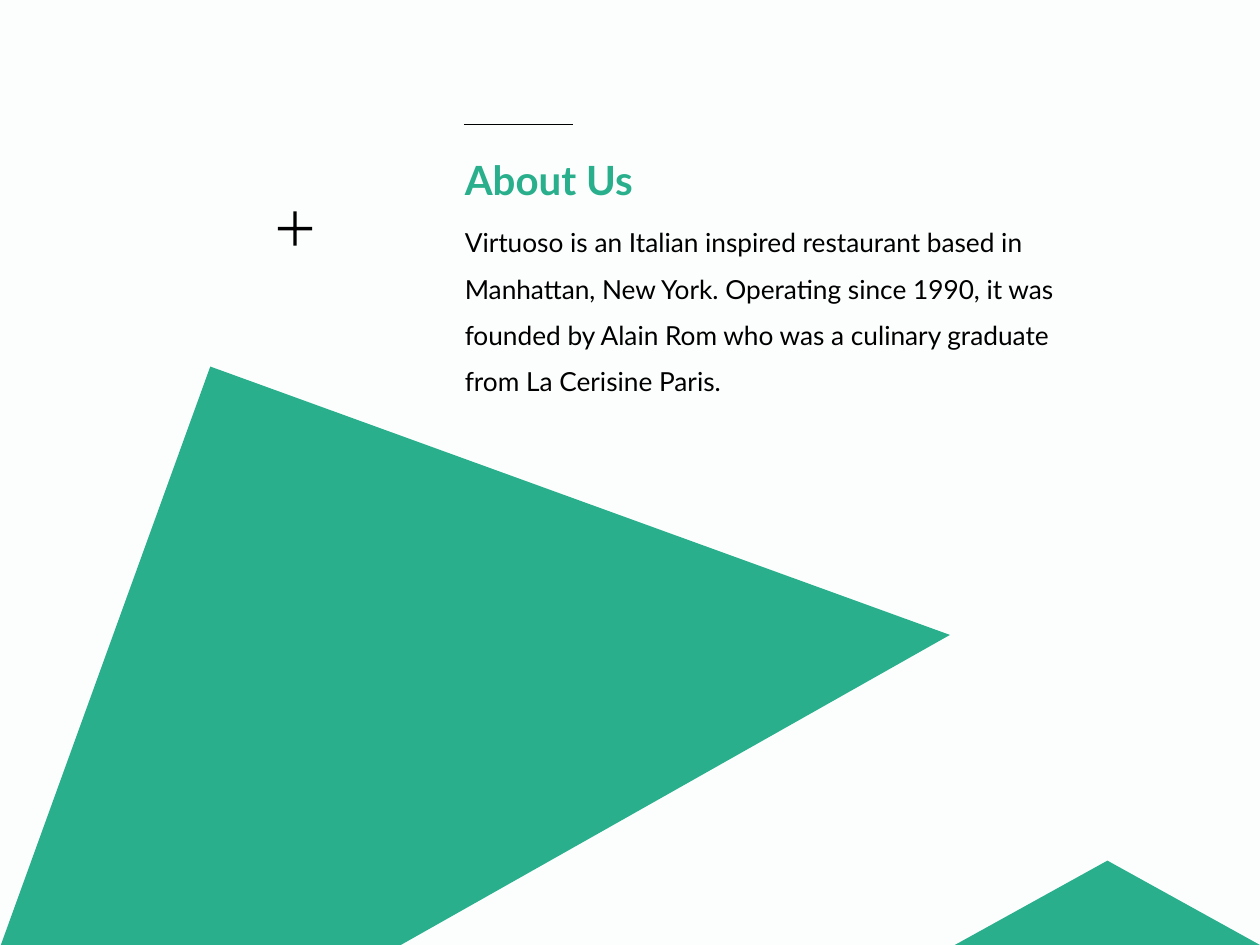
from dataclasses import dataclass

from lxml import etree
from pptx import Presentation
from pptx.dml.color import RGBColor
from pptx.enum.shapes import MSO_CONNECTOR, MSO_SHAPE
from pptx.enum.text import MSO_ANCHOR, MSO_AUTO_SIZE, PP_ALIGN
from pptx.oxml.ns import qn
from pptx.util import Cm, Pt


@dataclass(frozen=True)
class Theme:
    paper: RGBColor = RGBColor(0xFC, 0xFE, 0xFD)
    ink: RGBColor = RGBColor(0, 0, 0)
    accent: RGBColor = RGBColor(0x29, 0xAF, 0x8C)
    font: str = "Lato"
    title_size: Pt = Pt(23)
    body_size: Pt = Pt(15)
    rule_width: Pt = Pt(1)


THEME = Theme()
TITLE_ONLY = 5
TEXT_LEFT = 9.12
STORY = (
    "Virtuoso is an Italian inspired restaurant based in Manhattan, New York. "
    "Operating since 1990, it was founded by Alain Rom who was a culinary "
    "graduate from La Cerisine Paris."
)


def write_text(box, text, size, color, bold=False, line_spacing=1.0):
    frame = box.text_frame
    frame.word_wrap = True
    frame.auto_size = MSO_AUTO_SIZE.NONE
    frame.vertical_anchor = MSO_ANCHOR.TOP
    frame.margin_left = frame.margin_right = Cm(0.25)
    frame.margin_top = frame.margin_bottom = Cm(0.13)
    paragraph = frame.paragraphs[0]
    paragraph.alignment = PP_ALIGN.LEFT
    paragraph.line_spacing = line_spacing
    paragraph.space_before = Pt(0)
    run = paragraph.add_run()
    run.text = text
    run.font.name = THEME.font
    run.font.size = size
    run.font.bold = bold
    run.font.color.rgb = color


def add_title(slide):
    title = slide.shapes.title
    title.left, title.top = Cm(TEXT_LEFT), Cm(3)
    title.width, title.height = Cm(4.55), Cm(1.24)
    write_text(title, "About Us", THEME.title_size, THEME.accent, bold=True)


def add_story(slide):
    story = slide.shapes.add_textbox(Cm(TEXT_LEFT), Cm(4.14), Cm(12.78), Cm(3.43))
    write_text(story, STORY, THEME.body_size, THEME.ink, line_spacing=1.47)


def paint(shape, color):
    """Give the shape a flat fill without outline or shadow."""
    shape.fill.solid()
    shape.fill.fore_color.rgb = color
    shape.line.fill.background()
    shape.shadow.inherit = False


def add_preset(slide, preset, left, top, width, height, color, adjustment):
    shape = slide.shapes.add_shape(preset, Cm(left), Cm(top), Cm(width), Cm(height))
    shape.adjustments[0] = adjustment
    paint(shape, color)


def add_polygon(slide, corners, color):
    start, *others = [(Cm(x), Cm(y)) for x, y in corners]
    builder = slide.shapes.build_freeform(*start)
    builder.add_line_segments(others, close=True)
    paint(builder.convert_to_shape(), color)


def add_rule(slide, left, right, y):
    rule = slide.shapes.add_connector(
        MSO_CONNECTOR.STRAIGHT, Cm(left), Cm(y), Cm(right), Cm(y)
    )
    rule.line.color.rgb = THEME.ink
    rule.line.width = THEME.rule_width
    etree.SubElement(rule._element.spPr, qn("a:effectLst"))


def main():
    deck = Presentation()
    deck.slide_width, deck.slide_height = Cm(25.4), Cm(19.05)
    slide = deck.slides.add_slide(deck.slide_layouts[TITLE_ONLY])
    slide.background.fill.solid()
    slide.background.fill.fore_color.rgb = THEME.paper

    add_title(slide)
    add_story(slide)
    add_preset(slide, MSO_SHAPE.MATH_PLUS, 5.48, 4.14, 0.94, 0.94, THEME.ink, 0.071)
    add_rule(slide, 9.35, 11.56, 2.51)
    add_preset(
        slide, MSO_SHAPE.ISOSCELES_TRIANGLE, 19.25, 17.35, 6.15, 1.7, THEME.accent, 0.5
    )
    add_polygon(
        slide, [(0, 19.1), (8.03, 19.08), (19.15, 12.8), (4.24, 7.39)], THEME.accent
    )
    deck.save("out.pptx")


if __name__ == "__main__":
    main()
